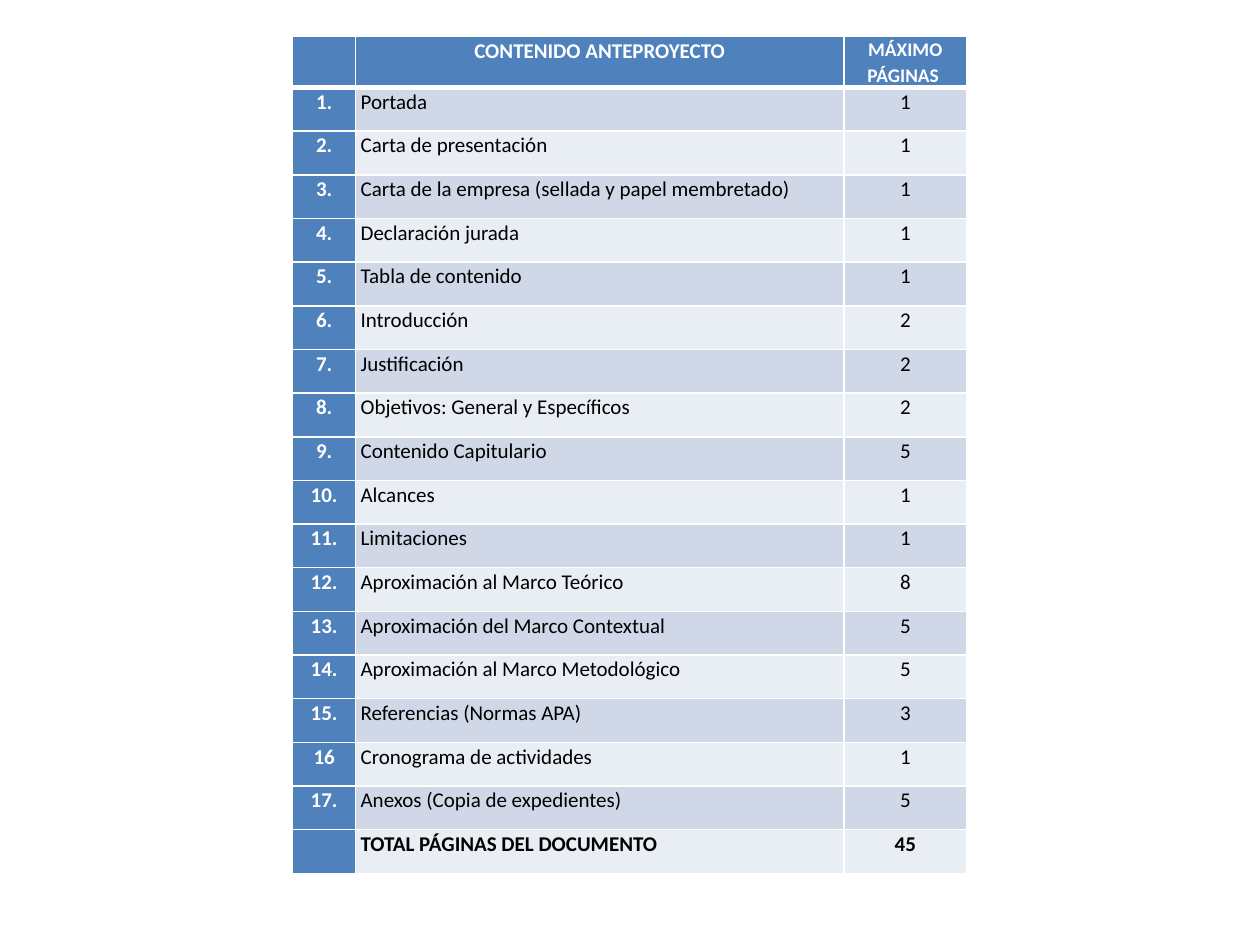
from lxml.etree import SubElement
from pptx import Presentation
from pptx.dml.color import RGBColor
from pptx.enum.text import PP_ALIGN as Align
from pptx.oxml.ns import qn
from pptx.util import Cm, Pt

# Content
HEAD = ("", "CONTENIDO ANTEPROYECTO", "MÁXIMO PÁGINAS ")
ITEMS = [
    ("1.", "Portada", "1"),
    ("2.", "Carta de presentación", "1"),
    ("3.", "Carta de la empresa (sellada y papel membretado)", "1"),
    ("4.", "Declaración jurada", "1"),
    ("5.", "Tabla de contenido", "1"),
    ("6.", "Introducción", "2"),
    ("7.", "Justificación", "2"),
    ("8.", "Objetivos: General y Específicos", "2"),
    ("9.", "Contenido Capitulario", "5"),
    ("10.", "Alcances", "1"),
    ("11.", "Limitaciones", "1"),
    ("12.", "Aproximación al Marco Teórico", "8"),
    ("13.", "Aproximación del Marco Contextual", "5"),
    ("14.", "Aproximación al Marco Metodológico", "5"),
    ("15.", "Referencias (Normas APA)", "3"),
    ("16", "Cronograma de actividades", "1"),
    ("17.", "Anexos (Copia de expedientes)", "5"),
]
TOTAL = ("", "TOTAL PÁGINAS DEL DOCUMENTO", "45")
ROWS = [HEAD, *ITEMS, TOTAL]
LAST = len(ROWS) - 1

# Look
BLUE = RGBColor(0x4F, 0x81, 0xBD)
DARK = RGBColor(0xD0, 0xD8, 0xE8)
PALE = RGBColor(0xE9, 0xED, 0xF4)
WHITE = RGBColor(0xFF, 0xFF, 0xFF)
BLACK = RGBColor(0, 0, 0)

# Sizes
LEFT, TOP = Cm(5.9), Cm(0.74)
WIDTHS = (Cm(1.27), Cm(9.84), Cm(2.48))
HEAD_H, ROW_H = Cm(1.02), Cm(0.88)
SIDE = Cm(0.1)


def set_edges(cell, row):
    """Draw white cell borders, thicker between the header and the items."""
    props = cell._tc.get_or_add_tcPr()
    thick = {"lnT": row == 1, "lnB": row == 0}
    for side in ("lnL", "lnR", "lnT", "lnB"):
        width = Pt(3 if thick.get(side) else 1)
        line = SubElement(props, qn("a:" + side), w=str(width))
        fill = SubElement(line, qn("a:solidFill"))
        SubElement(fill, qn("a:srgbClr"), val=str(WHITE))


def fill_cell(cell, row, col, text):
    blue = row == 0 or col == 0
    set_edges(cell, row)
    cell.fill.solid()
    cell.fill.fore_color.rgb = BLUE if blue else DARK if row % 2 else PALE
    cell.margin_left = cell.margin_right = SIDE
    cell.margin_top = cell.margin_bottom = 0

    para = cell.text_frame.paragraphs[0]
    para.alignment = Align.LEFT if col == 1 and row else Align.CENTER
    para.line_spacing = 1.07
    para.font.size = Pt(12)
    if not text:
        return
    run = para.add_run()
    run.text = text
    font = run.font
    font.name = "Calibri"
    font.size = Pt(11 if row == 0 and col == 2 else 12)
    font.bold = blue or row == LAST
    font.color.rgb = WHITE if blue else BLACK


def main():
    deck = Presentation()
    deck.slide_width, deck.slide_height = Cm(25.4), Cm(19.05)
    slide = deck.slides.add_slide(deck.slide_layouts[6])

    # Table of contents with page limits
    height = HEAD_H + ROW_H * LAST
    frame = slide.shapes.add_table(
        len(ROWS), len(WIDTHS), LEFT, TOP, sum(WIDTHS), height)
    table = frame.table
    for col, width in zip(table.columns, WIDTHS):
        col.width = width
    for row, texts in enumerate(ROWS):
        table.rows[row].height = ROW_H if row else HEAD_H
        for col, text in enumerate(texts):
            fill_cell(table.cell(row, col), row, col, text)

    deck.save("out.pptx")


if __name__ == "__main__":
    main()
